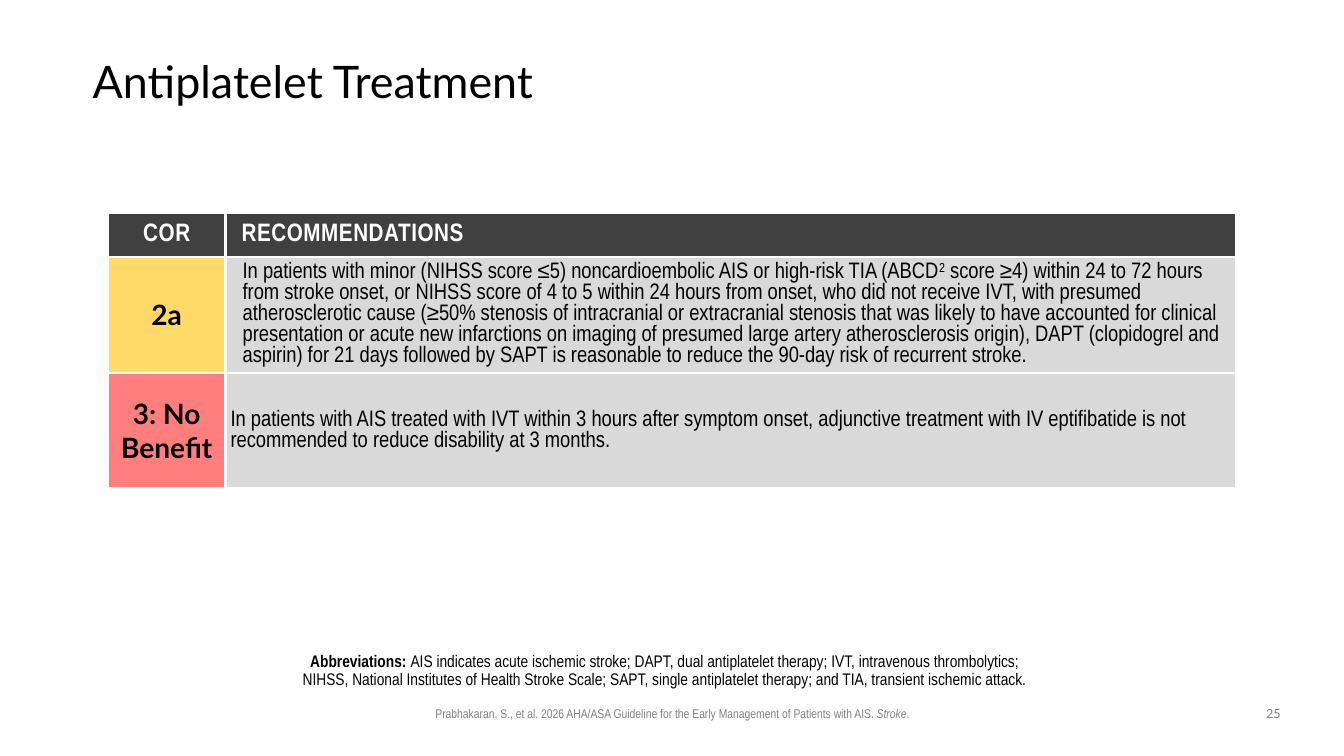
"""Build the antiplatelet treatment recommendations slide."""
from dataclasses import dataclass

from lxml import etree
from pptx import Presentation
from pptx.dml.color import RGBColor
from pptx.enum.text import MSO_ANCHOR, MSO_AUTO_SIZE, PP_ALIGN
from pptx.oxml.ns import qn
from pptx.util import Inches, Pt

LEFT, CENTER = PP_ALIGN.LEFT, PP_ALIGN.CENTER
TOP, MIDDLE, BOTTOM = MSO_ANCHOR.TOP, MSO_ANCHOR.MIDDLE, MSO_ANCHOR.BOTTOM
NO_AUTOFIT = MSO_AUTO_SIZE.NONE
SLIDE_WIDTH, SLIDE_HEIGHT = Inches(13.33), Inches(7.5)
BORDER_SIDES = ("a:lnL", "a:lnR", "a:lnT", "a:lnB")
COLUMN_SHARES = (8.75, 75.2)
ROW_SHARES = (5.87, 15.33, 15.33)


@dataclass(frozen=True)
class Theme:
    """Fonts, colours and type sizes of the slide."""
    narrow: str = "Arial Narrow"
    sans: str = "Lato"
    black: str = "000000"
    white: str = "FFFFFF"
    muted: str = "808080"
    header: str = "404040"
    panel: str = "D9D9D9"
    moderate: str = "FFDA68"
    no_benefit: str = "FF7F7F"
    title_size: float = 32
    grade_size: float = 20
    header_size: float = 18
    text_size: float = 16
    note_size: float = 12
    footer_size: float = 9
    border: float = 2.25


THEME = Theme()


@dataclass(frozen=True)
class Frame:
    """A rectangle in percent of the slide's width and height."""
    left: float
    top: float
    width: float
    height: float


@dataclass(frozen=True)
class Style:
    """The look of a run of text."""
    font: str
    size: float
    color: str = THEME.black
    bold: bool = False
    tracking: float = 0


@dataclass(frozen=True)
class Span:
    """A piece of text with its emphasis; a new line may follow it."""
    text: str
    bold: bool = False
    italic: bool = False
    raised: bool = False
    breaks: bool = False


@dataclass(frozen=True)
class Layout:
    """Paragraph alignment, spacing and indent."""
    align: PP_ALIGN = LEFT
    line: float = 1.0
    indent: float = 0


@dataclass(frozen=True)
class CellPlan:
    """Content and look of one table cell."""
    spans: tuple[Span, ...]
    style: Style
    fill: str
    layout: Layout
    margins: tuple[float, float] = (0.05, 0.04)


HEADER = Style(THEME.narrow, THEME.header_size, THEME.white, True, 0.4)
GRADE = Style(THEME.sans, THEME.grade_size, bold=True)
ADVICE = Style(THEME.narrow, THEME.text_size)
NOTE = Style(THEME.narrow, THEME.note_size)
TITLE = Style(THEME.sans, THEME.title_size)
CITATION = Style(THEME.narrow, THEME.footer_size, THEME.muted)
NUMBER = Style(THEME.sans, THEME.footer_size, THEME.muted)
CENTERED = Layout(CENTER)

CELLS = (
    (
        CellPlan((Span("COR"),), HEADER, THEME.header, CENTERED, (0.1, 0.05)),
        CellPlan((Span("RECOMMENDATIONS"),), HEADER, THEME.header,
                 Layout(indent=0.06), (0.1, 0.05)),
    ),
    (
        CellPlan((Span("2a"),), GRADE, THEME.moderate, CENTERED),
        CellPlan((
            Span("In patients with minor (NIHSS score ≤5) noncardioembolic AIS or "
                 "high-risk TIA (ABCD"),
            Span("2", raised=True),
            Span(" score ≥4) within 24 to 72 hours from stroke onset, or NIHSS score "
                 "of 4 to 5 within 24 hours from onset, who did not receive IVT, with "
                 "presumed atherosclerotic cause (≥50% stenosis of intracranial or "
                 "extracranial stenosis that was likely to have accounted for clinical "
                 "presentation or acute new infarctions on imaging of presumed large "
                 "artery atherosclerosis origin), DAPT (clopidogrel and aspirin) for "
                 "21 days followed by SAPT is reasonable to reduce the 90-day risk of "
                 "recurrent stroke."),
        ), ADVICE, THEME.panel, Layout(indent=0.12)),
    ),
    (
        CellPlan((Span("3: No Benefit"),), GRADE, THEME.no_benefit, CENTERED),
        CellPlan((
            Span("In patients with AIS treated with IVT within 3 hours after symptom "
                 "onset, adjunctive treatment with IV eptifibatide is not recommended "
                 "to reduce disability at 3 months."),
        ), ADVICE, THEME.panel, Layout()),
    ),
)
ABBREVIATIONS = (
    Span("Abbreviations: ", bold=True),
    Span("AIS indicates acute ischemic stroke; DAPT, dual antiplatelet therapy; "
         "IVT, intravenous thrombolytics;", breaks=True),
    Span("NIHSS, National Institutes of Health Stroke Scale; SAPT, single antiplatelet "
         "therapy; and TIA, transient ischemic attack."),
)
SOURCE = (
    Span("Prabhakaran, S., et al. 2026 AHA/ASA Guideline for the Early Management of "
         "Patients with AIS. "),
    Span("Stroke", italic=True),
    Span("."),
)


def across(share: float) -> int:
    """Return a percentage of the slide's width."""
    return round(SLIDE_WIDTH * share / 100)


def down(share: float) -> int:
    """Return a percentage of the slide's height."""
    return round(SLIDE_HEIGHT * share / 100)


def place(frame: Frame) -> tuple[int, int, int, int]:
    """Return left, top, width and height of a frame."""
    return across(frame.left), down(frame.top), across(frame.width), down(frame.height)


def write(text_frame, spans: tuple[Span, ...], style: Style, layout: Layout) -> None:
    """Fill the first paragraph of a text frame run by run."""
    para = text_frame.paragraphs[0]
    properties = para._p.get_or_add_pPr()
    properties.set("marL", str(Inches(layout.indent)))
    properties.set("indent", "0")
    etree.SubElement(properties, qn("a:buNone"))
    para.alignment, para.line_spacing = layout.align, layout.line
    para.space_before = para.space_after = Pt(0)
    for span in spans:
        run = para.add_run()
        run.text = span.text
        font = run.font
        font.name, font.size = style.font, Pt(style.size)
        font.bold, font.italic = style.bold or span.bold, span.italic
        font.color.rgb = RGBColor.from_string(style.color)
        if style.tracking:
            run._r.get_or_add_rPr().set("spc", str(round(style.tracking * 100)))
        if span.raised:
            run._r.get_or_add_rPr().set("baseline", "30000")
        if span.breaks:
            para.add_line_break()


def fill_box(box, frame: Frame, spans: tuple[Span, ...], style: Style, layout: Layout,
             anchor: MSO_ANCHOR, margins: tuple[float, ...] = (0.1, 0.05, 0.1, 0.05)) -> None:
    """Move a box to its frame and write its text."""
    box.left, box.top, box.width, box.height = place(frame)
    text = box.text_frame
    text.word_wrap, text.auto_size, text.vertical_anchor = True, NO_AUTOFIT, anchor
    (text.margin_left, text.margin_top,
     text.margin_right, text.margin_bottom) = map(Inches, margins)
    write(text, spans, style, layout)


def fill_cell(cell, plan: CellPlan) -> None:
    """Give a table cell its borders, fill and text."""
    properties = cell._tc.get_or_add_tcPr()
    for side in BORDER_SIDES:
        line = etree.SubElement(properties, qn(side), w=str(Pt(THEME.border)))
        solid = etree.SubElement(line, qn("a:solidFill"))
        etree.SubElement(solid, qn("a:srgbClr"), val=THEME.white)
    cell.fill.solid()
    cell.fill.fore_color.rgb = RGBColor.from_string(plan.fill)
    cell.vertical_anchor = MIDDLE
    cell.margin_left = cell.margin_right = Inches(plan.margins[0])
    cell.margin_top = cell.margin_bottom = Inches(plan.margins[1])
    write(cell.text_frame, plan.spans, plan.style, plan.layout)


def add_recommendations(page) -> None:
    """Add the table of graded recommendations."""
    frame = Frame(8.03, 28.13, sum(COLUMN_SHARES), sum(ROW_SHARES))
    table = page.shapes.add_table(len(ROW_SHARES), len(COLUMN_SHARES), *place(frame)).table
    for column, share in zip(table.columns, COLUMN_SHARES):
        column.width = across(share)
    for row, share, plans in zip(table.rows, ROW_SHARES, CELLS):
        row.height = down(share)
        for cell, plan in zip(row.cells, plans):
            fill_cell(cell, plan)


def main() -> None:
    """Build and save the deck."""
    deck = Presentation()
    deck.slide_width, deck.slide_height = SLIDE_WIDTH, SLIDE_HEIGHT
    page = deck.slides.add_slide(deck.slide_layouts[1])
    fill_box(page.shapes.title, Frame(6.9, 5.33, 86.27, 11.47),
             (Span("Antiplatelet Treatment"),), TITLE, Layout(line=0.9), MIDDLE, (0, 0, 0, 0))
    add_recommendations(page)
    fill_box(page.placeholders[1], Frame(13.95, 85.7, 71.79, 6.13), ABBREVIATIONS, NOTE,
             Layout(CENTER, 0.9), BOTTOM, (0, 0.05, 0.1, 0.05))
    for frame, spans, style in (
        (Frame(17.7, 92.67, 64.67, 3.33), SOURCE, CITATION),
        (Frame(93.17, 92.67, 3.15, 3.47), (Span("25"),), NUMBER),
    ):
        box = page.shapes.add_textbox(*place(frame))
        fill_box(box, frame, spans, style, CENTERED, TOP)
    deck.save("out.pptx")


if __name__ == "__main__":
    main()
